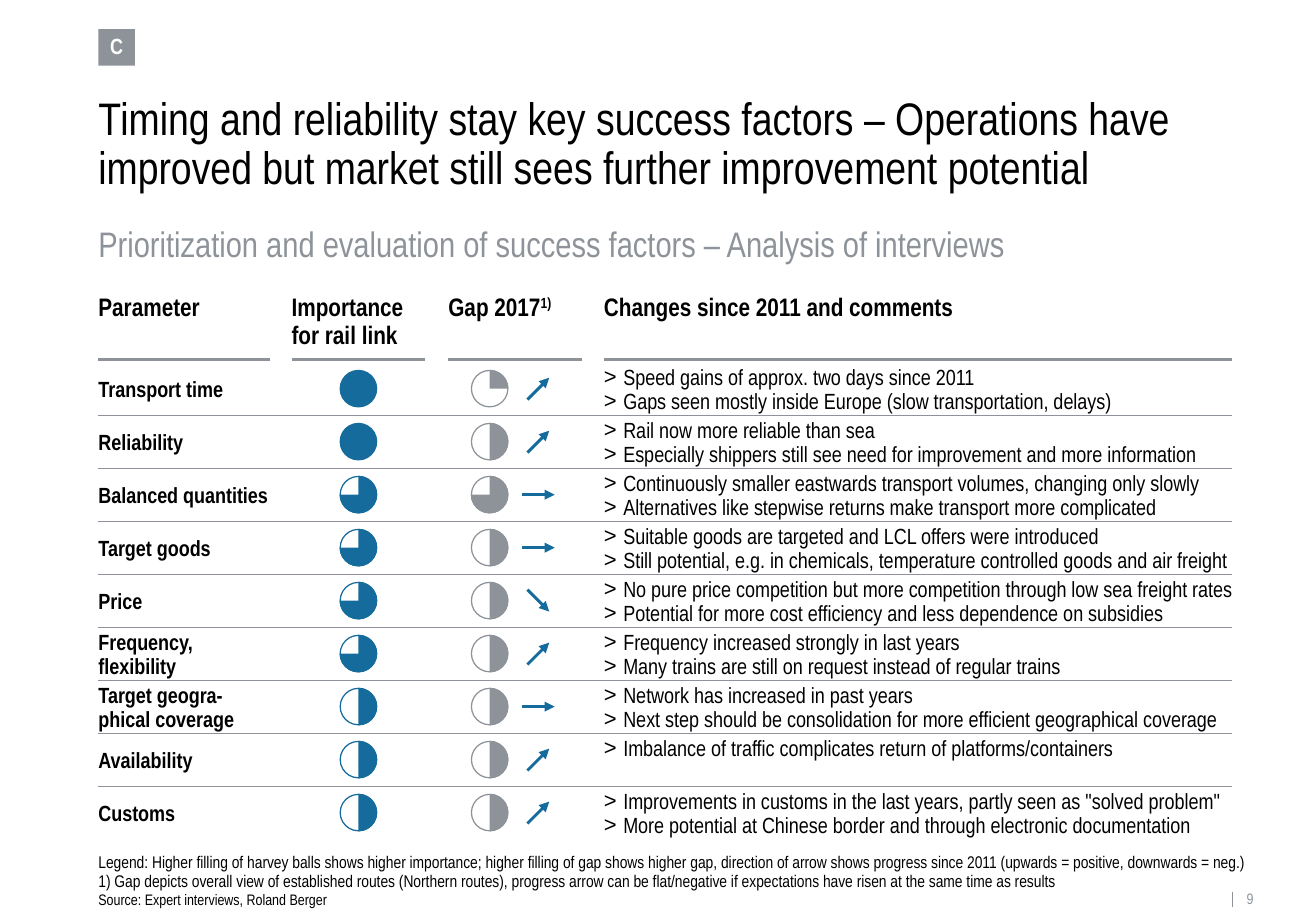
"""Build a slide that rates the success factors of a rail link."""
from dataclasses import dataclass

from lxml.etree import SubElement
from pptx import Presentation
from pptx.dml.color import RGBColor
from pptx.enum.shapes import MSO_CONNECTOR, MSO_SHAPE
from pptx.enum.text import MSO_ANCHOR, MSO_AUTO_SIZE, PP_ALIGN
from pptx.oxml.ns import qn
from pptx.shapes.autoshape import Shape
from pptx.slide import Slide
from pptx.text.text import TextFrame, _Paragraph as Paragraph
from pptx.util import Inches, Pt

BLACK = RGBColor(0x00, 0x00, 0x00)
WHITE = RGBColor(0xFF, 0xFF, 0xFF)
GRAY = RGBColor(0x8D, 0x93, 0x99)
BLUE = RGBColor(0x15, 0x6C, 0x9C)
FONT = "Arial Narrow"

LEFT, RIGHT = 0.81, 10.14
FIRST_ROW_TOP, LAST_ROW_TOP = 3.01, 6.5
BALL_SIZE = 0.3
IMPORTANCE_LEFT, GAP_LEFT = 2.8, 3.88
ARROW_CENTER = 4.43
ARROW_REACH = {"up": (0.09, -0.09), "flat": (0.135, 0), "down": (0.09, 0.09)}
ARC_END = {1: 0, 2: 54, 3: 108}


@dataclass(frozen=True)
class Column:
    """A column heading with its place."""
    heading: str
    left: float
    width: float
    superscript: str = ""


@dataclass(frozen=True)
class Factor:
    """A success factor; importance and gap count filled quarters."""
    name: str
    importance: int
    gap: int
    trend: str
    comments: str
    name_lines: int = 1


COLUMNS = [
    Column("Parameter", LEFT, 1.41),
    Column("Importance for rail link", 2.4, 1.1),
    Column("Gap 2017", 3.69, 1.1, "1)"),
    Column("Changes since 2011 and comments", 4.97, 5.17),
]

FACTORS = [
    Factor("Transport time", 4, 1, "up",
           "Speed gains of approx. two days since 2011\n"
           "Gaps seen mostly inside Europe (slow transportation, delays)"),
    Factor("Reliability", 4, 2, "up",
           "Rail now more reliable than sea\n"
           "Especially shippers still see need for improvement and more information"),
    Factor("Balanced quantities", 3, 3, "flat",
           "Continuously smaller eastwards transport volumes, changing only slowly\n"
           "Alternatives like stepwise returns make transport more complicated"),
    Factor("Target goods", 3, 2, "flat",
           "Suitable goods are targeted and LCL offers were introduced\n"
           "Still potential, e.g. in chemicals, temperature controlled goods and air freight"),
    Factor("Price", 3, 2, "down",
           "No pure price competition but more competition through low sea freight rates\n"
           "Potential for more cost efficiency and less dependence on subsidies"),
    Factor("Frequency, flexibility", 3, 2, "up",
           "Frequency increased strongly in last years\n"
           "Many trains are still on request instead of regular trains", 2),
    Factor("Target geogra-phical coverage", 2, 2, "flat",
           "Network has increased in past years\n"
           "Next step should be consolidation for more efficient geographical coverage", 2),
    Factor("Availability", 2, 2, "up",
           "Imbalance of traffic complicates return of platforms/containers"),
    Factor("Customs", 2, 2, "up",
           "Improvements in customs in the last years, partly seen as \"solved problem\"\n"
           "More potential at Chinese border and through electronic documentation"),
]


def add_bullet(paragraph: Paragraph) -> None:
    """Give a paragraph a hanging ">" bullet."""
    properties = paragraph._p.get_or_add_pPr()
    properties.set("marL", str(Inches(0.16)))
    properties.set("indent", str(-Inches(0.16)))
    SubElement(properties, qn("a:buFont")).set("typeface", "Arial")
    SubElement(properties, qn("a:buChar")).set("char", ">")


def fill_text(frame: TextFrame, text: str, *, size: float, color: RGBColor = BLACK,
              bold: bool = False, spacing: float = 0.9, bulleted: bool = False,
              superscript: str = "", align: PP_ALIGN = PP_ALIGN.LEFT,
              anchor: MSO_ANCHOR = MSO_ANCHOR.TOP) -> None:
    """Write formatted text into a frame, one paragraph per line."""
    frame.margin_left = frame.margin_right = frame.margin_top = frame.margin_bottom = 0
    frame.word_wrap = True
    frame.vertical_anchor = anchor
    for index, line in enumerate(text.split("\n")):
        paragraph = frame.add_paragraph() if index else frame.paragraphs[0]
        if bulleted:
            paragraph.level = 1
            add_bullet(paragraph)
        paragraph.alignment = align
        paragraph.line_spacing = spacing
        for part in filter(None, (line, superscript)):
            run = paragraph.add_run()
            run.text = part
            run.font.name = FONT
            run.font.size = Pt(size)
            run.font.bold = bold
            run.font.color.rgb = color
            if part == superscript:
                run._r.get_or_add_rPr().set("baseline", "30000")


def add_text(slide: Slide, text: str, left: float, top: float, width: float,
             height: float, **text_format) -> None:
    """Add a text box that grows with its text."""
    box = slide.shapes.add_textbox(Inches(left), Inches(top), Inches(width), Inches(height))
    fill_text(box.text_frame, text, **text_format)
    box.text_frame.auto_size = MSO_AUTO_SIZE.SHAPE_TO_FIT_TEXT


def add_line(slide: Slide, start: tuple[float, float], end: tuple[float, float], *,
             color: RGBColor = GRAY, width: float = 0.75, arrow: bool = False) -> None:
    """Add a straight line, with an arrowhead at its end if asked."""
    connector = slide.shapes.add_connector(
        MSO_CONNECTOR.STRAIGHT, *(Inches(value) for value in (*start, *end)))
    connector.line.color.rgb = color
    connector.line.width = Pt(width)
    if arrow:
        SubElement(connector.line._get_or_add_ln(), qn("a:tailEnd")).set("type", "triangle")
    SubElement(connector._element.spPr, qn("a:effectLst"))


def add_square_shape(slide: Slide, kind: MSO_SHAPE, left: float, top: float,
                     fill: RGBColor, outline: RGBColor) -> Shape:
    """Add a filled shape as wide as it is high."""
    size = Inches(BALL_SIZE)
    shape = slide.shapes.add_shape(kind, Inches(left), Inches(top), size, size)
    shape.shadow.inherit = False
    shape.fill.solid()
    shape.fill.fore_color.rgb = fill
    shape.line.color.rgb = outline
    shape.line.width = Pt(0.75)
    return shape


def add_harvey_ball(slide: Slide, left: float, top: float, quarters: int,
                    color: RGBColor) -> None:
    """Add a ball filled clockwise by a number of quarters."""
    full = quarters == 4
    add_square_shape(slide, MSO_SHAPE.OVAL, left, top, color if full else WHITE, color)
    if not full:
        arc = add_square_shape(slide, MSO_SHAPE.ARC, left, top, color, color)
        arc.adjustments[0] = 162
        arc.adjustments[1] = ARC_END[quarters]


def add_factor(slide: Slide, factor: Factor, top: float) -> None:
    """Add one row of the evaluation."""
    name_top = top + 0.1 * (2 - factor.name_lines)
    add_text(slide, factor.name, LEFT, name_top, COLUMNS[0].width,
             0.19 * factor.name_lines, size=13, bold=True, spacing=0.93)
    add_harvey_ball(slide, IMPORTANCE_LEFT, top + 0.04, factor.importance, BLUE)
    add_harvey_ball(slide, GAP_LEFT, top + 0.04, factor.gap, GRAY)
    reach_x, reach_y = ARROW_REACH[factor.trend]
    middle = top + 0.19
    add_line(slide, (ARROW_CENTER - reach_x, middle - reach_y),
             (ARROW_CENTER + reach_x, middle + reach_y), color=BLUE, width=1.75, arrow=True)
    add_text(slide, factor.comments, COLUMNS[3].left, top, COLUMNS[3].width,
             0.19 * len(factor.comments.split("\n")), size=13, spacing=0.93, bulleted=True)


def main() -> None:
    """Build and save the slide."""
    presentation = Presentation()
    presentation.slide_width = Inches(10.83)
    presentation.slide_height = Inches(7.5)
    slide = presentation.slides.add_slide(presentation.slide_layouts[6])

    badge = add_square_shape(slide, MSO_SHAPE.RECTANGLE, LEFT, 0.24, GRAY, GRAY)
    badge.line.fill.background()
    fill_text(badge.text_frame, "C", size=13, color=WHITE, bold=True,
              align=PP_ALIGN.CENTER, anchor=MSO_ANCHOR.MIDDLE)
    add_text(slide, "Timing and reliability stay key success factors – Operations have "
             "improved but market still sees further improvement potential",
             LEFT, 0.79, 9.34, 0.82, size=27)
    add_text(slide, "Prioritization and evaluation of success factors – Analysis of interviews",
             LEFT, 1.87, 9.34, 0.33, size=21, color=GRAY)

    for column in COLUMNS:
        add_text(slide, column.heading, column.left, 2.42, column.width, 0.23, size=15,
                 bold=True, spacing=0.93, superscript=column.superscript)
        add_line(slide, (column.left, 2.96), (column.left + column.width, 2.96), width=1.75)

    row_step = (LAST_ROW_TOP - FIRST_ROW_TOP) / (len(FACTORS) - 1)
    for index, factor in enumerate(FACTORS):
        top = FIRST_ROW_TOP + index * row_step
        add_factor(slide, factor, top)
        if index < len(FACTORS) - 1:
            add_line(slide, (LEFT, top + 0.41), (RIGHT, top + 0.41))

    add_text(slide, "Legend: Higher filling of harvey balls shows higher importance; higher "
             "filling of gap shows higher gap, direction of arrow shows progress since 2011 "
             "(upwards = positive, downwards = neg.)", LEFT, 7.03, 9.6, 0.15, size=10)
    add_text(slide, "1) Gap depicts overall view of established routes (Northern routes), "
             "progress arrow can be flat/negative if expectations have risen at the same time "
             "as results", LEFT, 7.19, 9.33, 0.15, size=10, anchor=MSO_ANCHOR.BOTTOM)
    add_text(slide, "Source: Expert interviews, Roland Berger", LEFT, 7.34, 1.95, 0.14,
             size=9, anchor=MSO_ANCHOR.BOTTOM)
    add_line(slide, (RIGHT, 7.34), (RIGHT, 7.47))
    add_text(slide, "9", 10.26, 7.34, 0.13, 0.14, size=9, color=GRAY)
    presentation.save("out.pptx")


if __name__ == "__main__":
    main()
